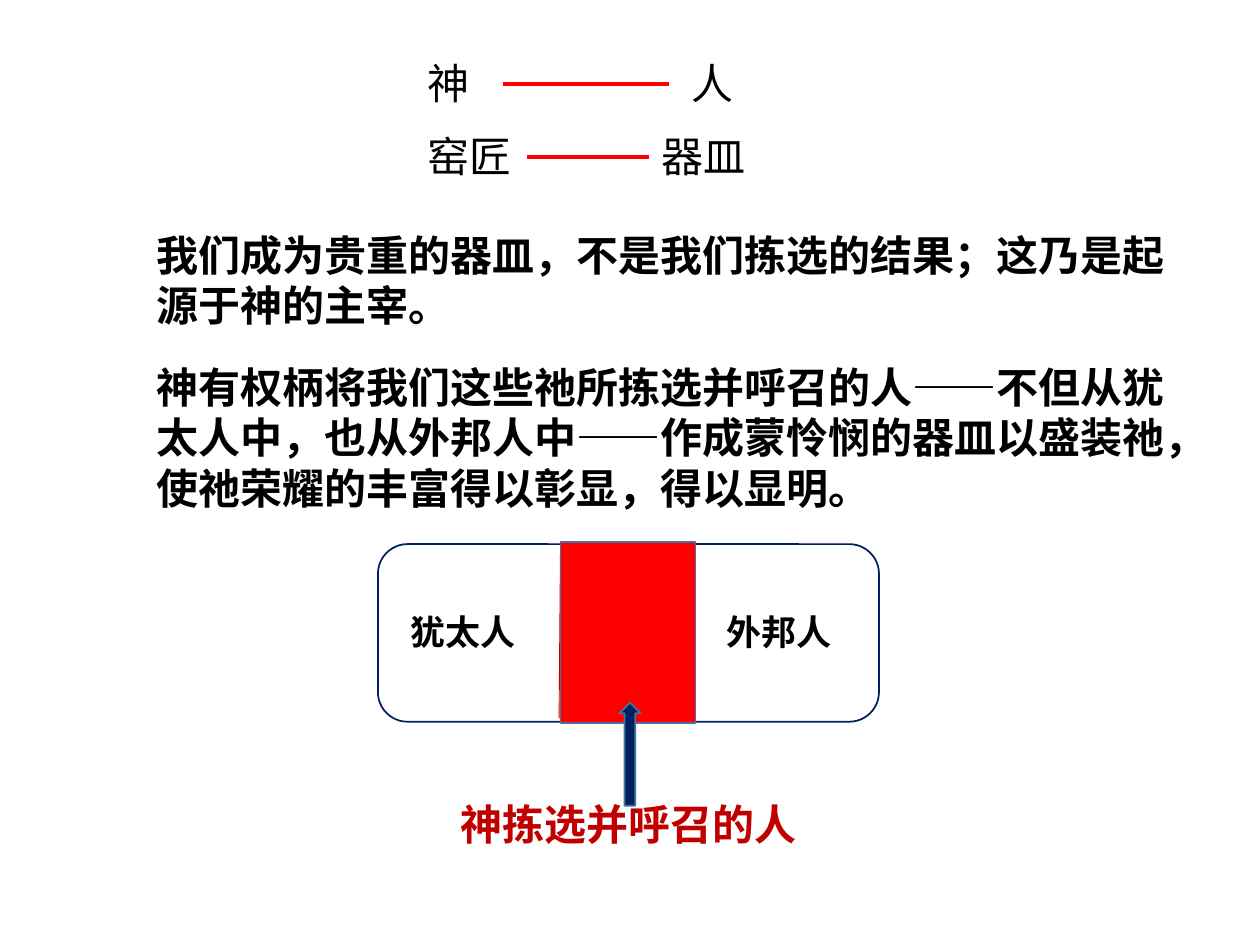
from lxml.etree import SubElement
from pptx import Presentation
from pptx.dml.color import RGBColor
from pptx.enum.shapes import MSO_CONNECTOR, MSO_SHAPE
from pptx.enum.text import MSO_AUTO_SIZE
from pptx.oxml.ns import qn
from pptx.util import Cm, Pt

CJK_FONT = "Noto Sans CJK SC"
NAVY, RED, DARK_RED, STEEL = "002060", "FF0000", "C00000", "43739E"


def color(value):
    return RGBColor.from_string(value)


def add_text(slide, text, left, top, width, height, size=24, bold=True,
             font="Calibri", fill="000000", wrap=True):
    box = slide.shapes.add_textbox(Cm(left), Cm(top), Cm(width), Cm(height))
    frame = box.text_frame
    frame.word_wrap = wrap
    frame.auto_size = MSO_AUTO_SIZE.SHAPE_TO_FIT_TEXT
    paragraph = frame.paragraphs[0]
    paragraph.text = text
    paragraph.font.name = font
    paragraph.font.size = Pt(size)
    paragraph.font.bold = bold
    paragraph.font.color.rgb = color(fill)
    if font == CJK_FONT:
        properties = paragraph.font._element
        SubElement(properties, qn("a:ea"), typeface=font)


def add_box(slide, kind, left, top, width, height, fill, line, rotation=0):
    shape = slide.shapes.add_shape(kind, Cm(left), Cm(top), Cm(width), Cm(height))
    shape.shadow.inherit = False
    shape.rotation = rotation
    shape.fill.solid()
    shape.fill.fore_color.rgb = color(fill)
    shape.line.color.rgb = color(line)
    shape.line.width = Pt(1)


def add_line(slide, x1, y1, x2, y2, line, width):
    connector = slide.shapes.add_connector(
        MSO_CONNECTOR.STRAIGHT, Cm(x1), Cm(y1), Cm(x2), Cm(y2))
    connector.line.color.rgb = color(line)
    connector.line.width = Pt(width)
    SubElement(connector._element.spPr, qn("a:effectLst"))


def main():
    presentation = Presentation()
    presentation.slide_width, presentation.slide_height = Cm(25.4), Cm(19.05)
    slide = presentation.slides.add_slide(presentation.slide_layouts[6])

    # Paired terms, each joined by a red line
    pairs = [
        (1.04, ("神", 8.36, 1.78), ("人", 13.69, 1.78), (10.14, 13.49)),
        (2.51, ("窑匠", 8.36, 2.59), ("器皿", 13.08, 3.05), (10.62, 13.08)),
    ]
    for top, *terms, (start, end) in pairs:
        for text, left, width in terms:
            add_text(slide, text, left, top, width, 1.28, bold=False, font=CJK_FONT)
        add_line(slide, start, top + 0.65, end, top + 0.65, RED, 2.25)

    # Statements
    add_text(slide, "我们成为贵重的器皿，不是我们拣选的结果；这乃是起源于神的主宰。",
             2.9, 4.5, 21.2, 2.31)
    add_text(slide, "神有权柄将我们这些祂所拣选并呼召的人——不但从犹太人中，"
             "也从外邦人中——作成蒙怜悯的器皿以盛装祂，"
             "使祂荣耀的丰富得以彰显，得以显明。",
             2.9, 7.16, 21.2, 3.33)

    # Two peoples and the chosen part between them
    for left in (7.62, 12.67):
        add_box(slide, MSO_SHAPE.ROUNDED_RECTANGLE, left, 10.97, 5.05, 3.58,
                "FFFFFF", NAVY)
    for x, top in ((11.3, 10.92), (13.97, 11.02)):
        add_line(slide, x, top, x - 0.03, top + 3.56, DARK_RED, 0.5)
    add_text(slide, "犹太人", 8.03, 12.19, 2.64, 1.11, size=20, wrap=False)
    add_text(slide, "外邦人", 14.4, 12.19, 3.05, 1.11, size=20)
    add_box(slide, MSO_SHAPE.RECTANGLE, 11.3, 10.92, 2.72, 3.66, RED, STEEL)

    # Caption with an arrow pointing up
    add_text(slide, "神拣选并呼召的人", 9.04, 15.98, 7.32, 1.28,
             fill=DARK_RED, wrap=False)
    add_box(slide, MSO_SHAPE.RIGHT_ARROW, 11.66, 14.99, 2.08, 0.43,
            NAVY, STEEL, rotation=270)

    presentation.save("out.pptx")


if __name__ == "__main__":
    main()
